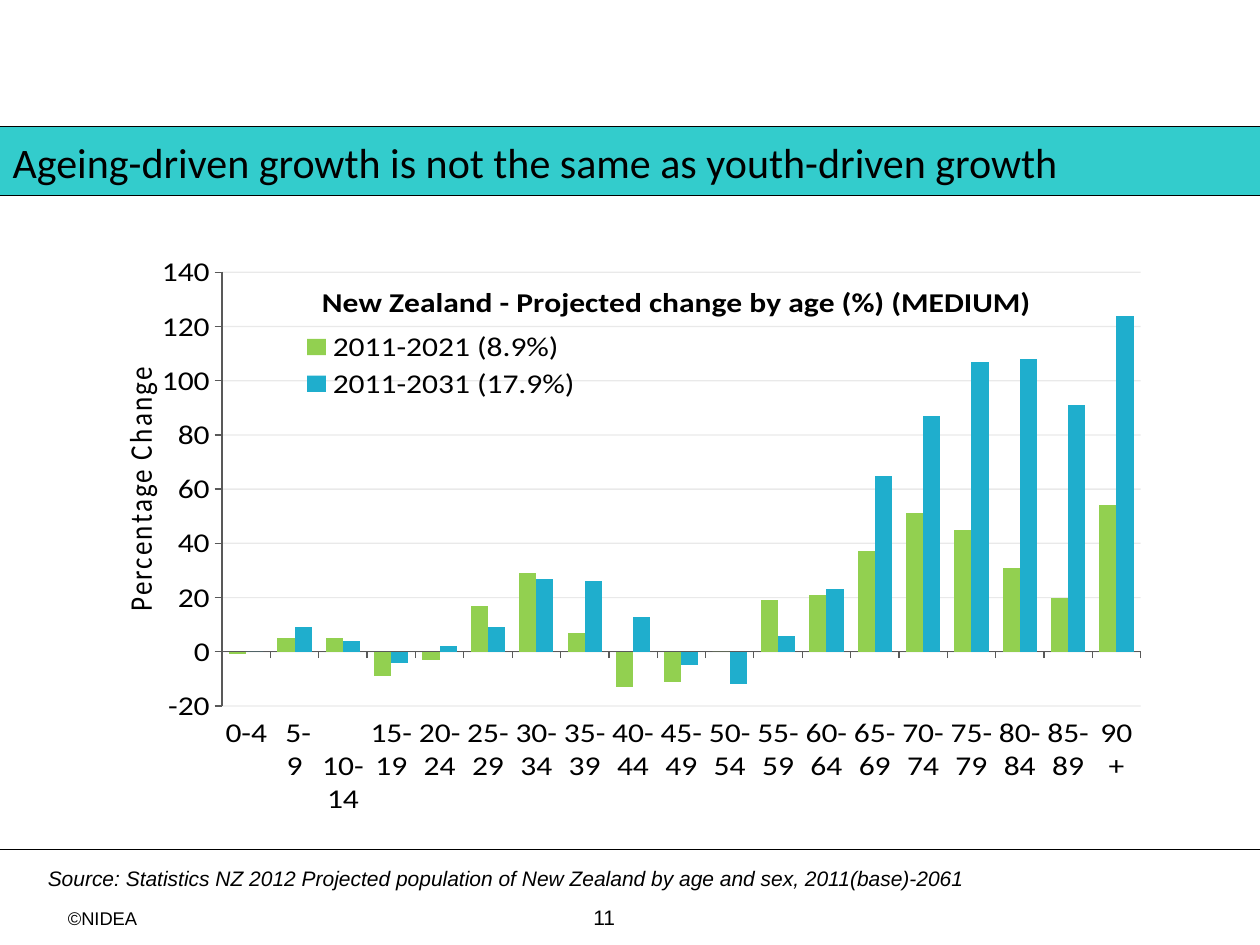
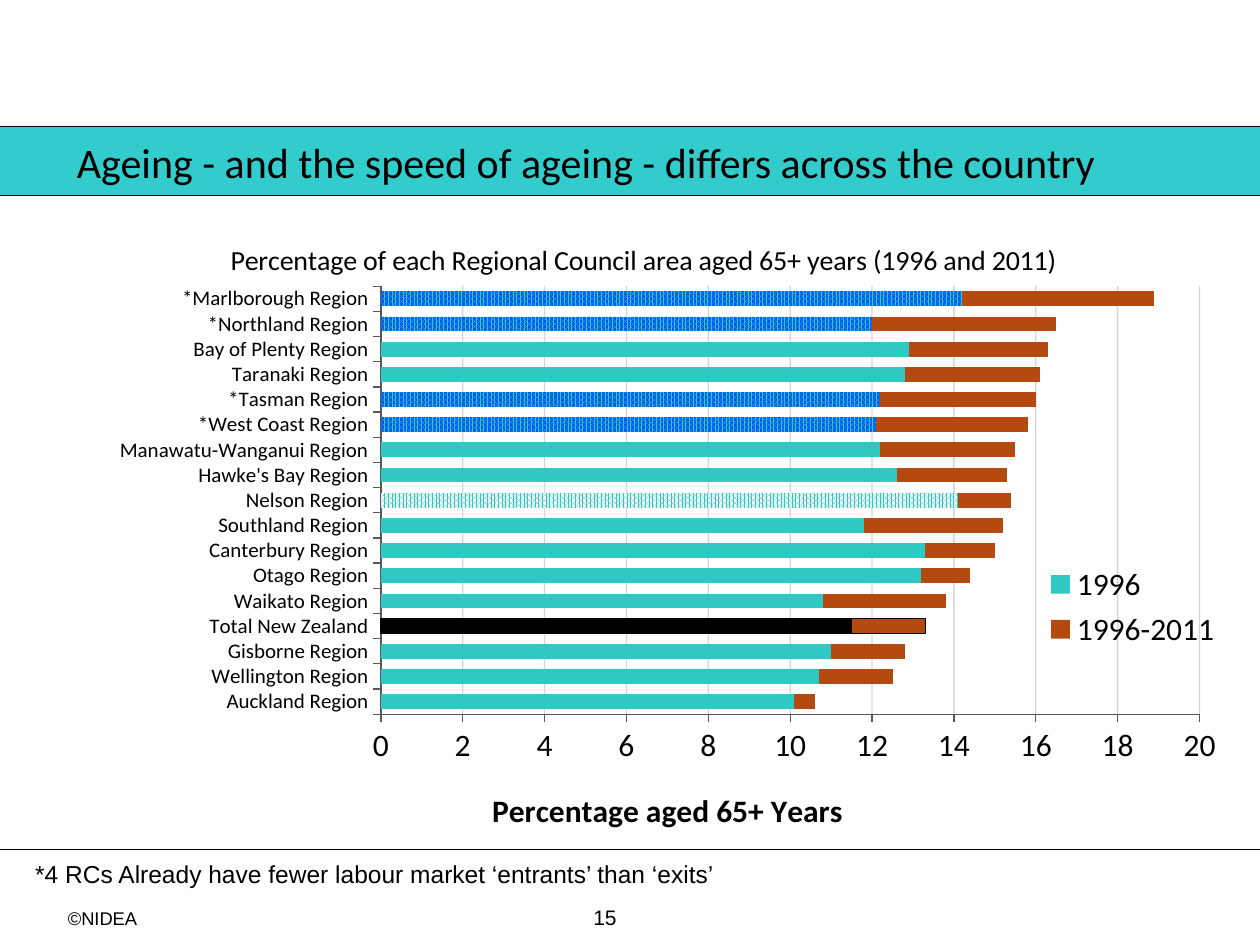
from lxml.etree import SubElement
from pptx import Presentation
from pptx.chart.data import CategoryChartData
from pptx.dml.color import RGBColor
from pptx.enum.chart import XL_CHART_TYPE, XL_LEGEND_POSITION, XL_TICK_LABEL_POSITION, XL_TICK_MARK
from pptx.enum.dml import MSO_PATTERN
from pptx.enum.shapes import MSO_CONNECTOR, MSO_SHAPE
from pptx.enum.text import MSO_ANCHOR, PP_ALIGN
from pptx.oxml.ns import qn
from pptx.util import Pt

BLACK = RGBColor(0x00, 0x00, 0x00)
WHITE = RGBColor(0xFF, 0xFF, 0xFF)
BAND_TEAL = RGBColor(0x33, 0xCC, 0xCC)
AXIS_GREY = RGBColor(0x59, 0x59, 0x59)
GRID_GREY = RGBColor(0xA6, 0xA6, 0xA6)
GREEN = RGBColor(0x92, 0xD0, 0x50)
BLUE = RGBColor(0x1F, 0xAE, 0xCD)
TEAL = RGBColor(0x2D, 0xC9, 0xC2)
RUST = RGBColor(0xB5, 0x4A, 0x10)
BRIGHT_BLUE = RGBColor(0x00, 0x53, 0xFA)
HEADING_FONT, NOTE_FONT = "Calibri", "Arial"


def style_font(font, name, size, bold=False, italic=False):
    font.name, font.size, font.bold, font.italic = name, Pt(size), bold, italic
    font.color.rgb = BLACK


def place_part(anchor, inner=False, **fractions):
    """Give a chart part a manual layout, just before its anchor element."""
    parent = anchor.getparent()
    for old in parent.findall(qn("c:layout")):
        parent.remove(old)
    layout = SubElement(parent, qn("c:layout"))
    anchor.addprevious(layout)
    manual = SubElement(layout, qn("c:manualLayout"))
    if inner:
        SubElement(manual, qn("c:layoutTarget")).set("val", "inner")
    for side in "xy":
        SubElement(manual, qn(f"c:{side}Mode")).set("val", "edge")
    for side, fraction in fractions.items():
        SubElement(manual, qn(f"c:{side}")).set("val", str(fraction))


class Deck:
    def __init__(self):
        self.presentation = Presentation()
        self.presentation.slide_width, self.presentation.slide_height = Pt(720), Pt(540)
        self.slide = None

    def start_slide(self, title, title_left, number):
        self.slide = self.presentation.slides.add_slide(self.presentation.slide_layouts[5])
        self.band()
        self.footer_rule()
        self.note("©NIDEA", 31.7, 514.8, 62, 21, 10.5)
        self.note(str(number), 332, 513.4, 158, 22, 12)
        self.title(title, title_left)

    def band(self):
        band = self.slide.shapes.add_shape(MSO_SHAPE.RECTANGLE, Pt(-9), Pt(72), Pt(738), Pt(39.5))
        band.shadow.inherit = False
        band.fill.solid()
        band.fill.fore_color.rgb = BAND_TEAL
        band.line.color.rgb = BLACK
        band.line.width = Pt(0.5)

    def footer_rule(self):
        rule = self.slide.shapes.add_connector(
            MSO_CONNECTOR.STRAIGHT, Pt(0), Pt(485.3), Pt(720), Pt(485.3))
        rule.line.color.rgb = BLACK
        rule.line.width = Pt(0.75)
        SubElement(rule._element.spPr, qn("a:effectLst"))

    def title(self, text, left):
        title = self.slide.shapes.title
        title.left, title.top, title.width, title.height = Pt(left), Pt(62), Pt(705.6 - left), Pt(60.5)
        title.text_frame.vertical_anchor = MSO_ANCHOR.MIDDLE
        paragraph = title.text_frame.paragraphs[0]
        paragraph.alignment = PP_ALIGN.LEFT
        run = paragraph.add_run()
        run.text = text
        style_font(run.font, HEADING_FONT, 24)
        # The title lies in front of the band
        self.slide.shapes._spTree.append(title._element)

    def note(self, text, left, top, width, height, size, italic=False):
        box = self.slide.shapes.add_textbox(Pt(left), Pt(top), Pt(width), Pt(height))
        box.text_frame.word_wrap = True
        run = box.text_frame.paragraphs[0].add_run()
        run.text = text
        style_font(run.font, NOTE_FONT, size, italic=italic)

    def chart(self, kind, top, height, categories, series, gap, overlap, plot_box):
        data = CategoryChartData()
        data.categories = categories
        for name, values, _ in series:
            data.add_series(name, values)
        chart = self.slide.shapes.add_chart(
            kind, Pt(57.6), Pt(top), Pt(648), Pt(height), data).chart
        style_font(chart.font, HEADING_FONT, 18)
        plot = chart.plots[0]
        plot.vary_by_categories = False
        plot.gap_width, plot.overlap = gap, overlap
        for bars, (_, _, color) in zip(plot.series, series):
            bars.invert_if_negative = False
            bars.format.fill.solid()
            bars.format.fill.fore_color.rgb = color
        x, y, w, h = plot_box
        place_part(plot._element, inner=True, x=x, y=y, w=w, h=h)
        return chart

    def chart_heading(self, heading, text, size, bold, x, y, upright=False):
        run = heading.text_frame.paragraphs[0].add_run()
        run.text = text
        style_font(run.font, HEADING_FONT, size, bold)
        if upright:
            body = heading.text_frame._txBody.find(qn("a:bodyPr"))
            body.set("rot", "-5400000")
            body.set("vert", "horz")
        place_part(heading._element.find(qn("c:overlay")), x=x, y=y)

    def legend(self, chart, x, y, w, h):
        chart.has_legend = True
        chart.legend.position = XL_LEGEND_POSITION.RIGHT
        chart.legend.include_in_layout = False
        style_font(chart.legend.font, HEADING_FONT, 18)
        place_part(chart.legend._element.find(qn("c:overlay")), x=x, y=y, w=w, h=h)

    def axes(self, chart, low, high, step, category_size, grid_color, grid_opacity):
        values, categories = chart.value_axis, chart.category_axis
        for axis, size in ((values, 18), (categories, category_size)):
            axis.major_tick_mark = XL_TICK_MARK.OUTSIDE
            axis.minor_tick_mark = XL_TICK_MARK.NONE
            axis.format.line.color.rgb = AXIS_GREY
            axis.format.line.width = Pt(0.75)
            style_font(axis.tick_labels.font, HEADING_FONT, size)
        categories.tick_label_position = XL_TICK_LABEL_POSITION.LOW
        categories._element.find(qn("c:txPr")).find(qn("a:bodyPr")).set("rot", "0")
        values.minimum_scale, values.maximum_scale, values.major_unit = low, high, step
        values.has_major_gridlines = True
        grid = values.major_gridlines.format.line
        grid.color.rgb = grid_color
        grid.width = Pt(0.75)
        color = next(values.major_gridlines._xAx.find(qn("c:majorGridlines")).iter(qn("a:srgbClr")))
        SubElement(color, qn("a:alpha")).set("val", str(grid_opacity * 1000))

    def pattern_bar(self, bars, index, background):
        fill = bars.points[index].format.fill
        fill.patterned()
        fill.pattern = MSO_PATTERN.PERCENT_80
        fill.fore_color.rgb = TEAL
        fill.back_color.rgb = background

    def outline_bar(self, bars, index, color):
        bar = bars.points[index].format
        bar.fill.solid()
        bar.fill.fore_color.rgb = color
        bar.line.color.rgb = BLACK
        bar.line.width = Pt(0.75)


def growth_slide(deck):
    deck.start_slide("Ageing-driven growth is not the same as youth-driven growth", 0, 11)
    ages = ["0-4", " 5-9", " 10-14"] + [f"{age}-{age + 4}" for age in range(15, 90, 5)] + ["90+"]
    projections = [
        ("2011-2021 (8.9%)", [-1, 5, 5, -9, -3, 17, 29, 7, -13, -11, 0, 19, 21, 37, 51, 45, 31, 20, 54], GREEN),
        ("2011-2031 (17.9%)", [0, 9, 4, -4, 2, 9, 27, 26, 13, -5, -12, 6, 23, 65, 87, 107, 108, 91, 124], BLUE),
    ]
    growth = deck.chart(XL_CHART_TYPE.COLUMN_CLUSTERED, 145.4, 320.4, ages, projections,
                        82, 0, (0.107, 0.037, 0.81, 0.899))
    deck.axes(growth, -20, 140, 20, 18, GRID_GREY, 24)
    deck.chart_heading(growth.chart_title, "New Zealand - Projected change by age (%) (MEDIUM)",
                       18, True, 0.19, 0.05)
    deck.chart_heading(growth.value_axis.axis_title, "Percentage Change", 18, False, 0.01, 0.29, upright=True)
    deck.legend(growth, 0.16, 0.15, 0.28, 0.16)
    deck.note("Source: Statistics NZ 2012 Projected population of New Zealand by age and sex, 2011(base)-2061",
              20.2, 491, 550, 44, 12, italic=True)


def regions_slide(deck):
    deck.start_slide("Ageing - and the speed of ageing - differs across the country", 36.7, 15)
    # Region, share in 1996, rise from 1996 to 2011
    regions = [
        ("Auckland Region", 10.1, 0.5), ("Wellington Region", 10.7, 1.8),
        ("Gisborne Region", 11, 1.8), ("Total New Zealand", 11.5, 1.8),
        ("Waikato Region", 10.8, 3), ("Otago Region", 13.2, 1.2),
        ("Canterbury Region", 13.3, 1.7), ("Southland Region", 11.8, 3.4),
        ("Nelson Region", 14.1, 1.3), ("Hawke's Bay Region", 12.6, 2.7),
        ("Manawatu-Wanganui Region", 12.2, 3.3), ("*West Coast Region", 12.1, 3.7),
        ("*Tasman Region", 12.2, 3.8), ("Taranaki Region", 12.8, 3.3),
        ("Bay of Plenty Region", 12.9, 3.4), ("*Northland Region", 12, 4.5),
        ("*Marlborough Region", 14.2, 4.7),
    ]
    names, shares, rises = zip(*regions)
    ageing = deck.chart(XL_CHART_TYPE.BAR_STACKED, 128.2, 351.4, names,
                        [("1996", shares, TEAL), ("1996-2011", rises, RUST)],
                        70, 100, (0.247, 0.102, 0.722, 0.705))
    deck.axes(ageing, 0, 20, 2, 12, BLACK, 16)
    deck.chart_heading(ageing.chart_title,
                       "Percentage of each Regional Council area aged 65+ years (1996 and 2011)",
                       16, False, 0.11, 0.02)
    deck.chart_heading(ageing.value_axis.axis_title, "Percentage aged 65+ Years", 18, True, 0.34, 0.92)
    deck.legend(ageing, 0.82, 0.55, 0.18, 0.16)

    # Starred regions, Nelson and the national total stand out
    base, rise = ageing.plots[0].series
    for index, name in enumerate(names):
        if name.startswith("*"):
            deck.pattern_bar(base, index, BRIGHT_BLUE)
    deck.pattern_bar(base, names.index("Nelson Region"), WHITE)
    total = names.index("Total New Zealand")
    deck.outline_bar(base, total, BLACK)
    deck.outline_bar(rise, total, RUST)
    deck.note("*4 RCs Already have fewer labour market ‘entrants’ than ‘exits’", 13, 487.4, 431, 24.5, 14)


def main():
    deck = Deck()
    growth_slide(deck)
    regions_slide(deck)
    deck.presentation.save("out.pptx")


if __name__ == "__main__":
    main()
